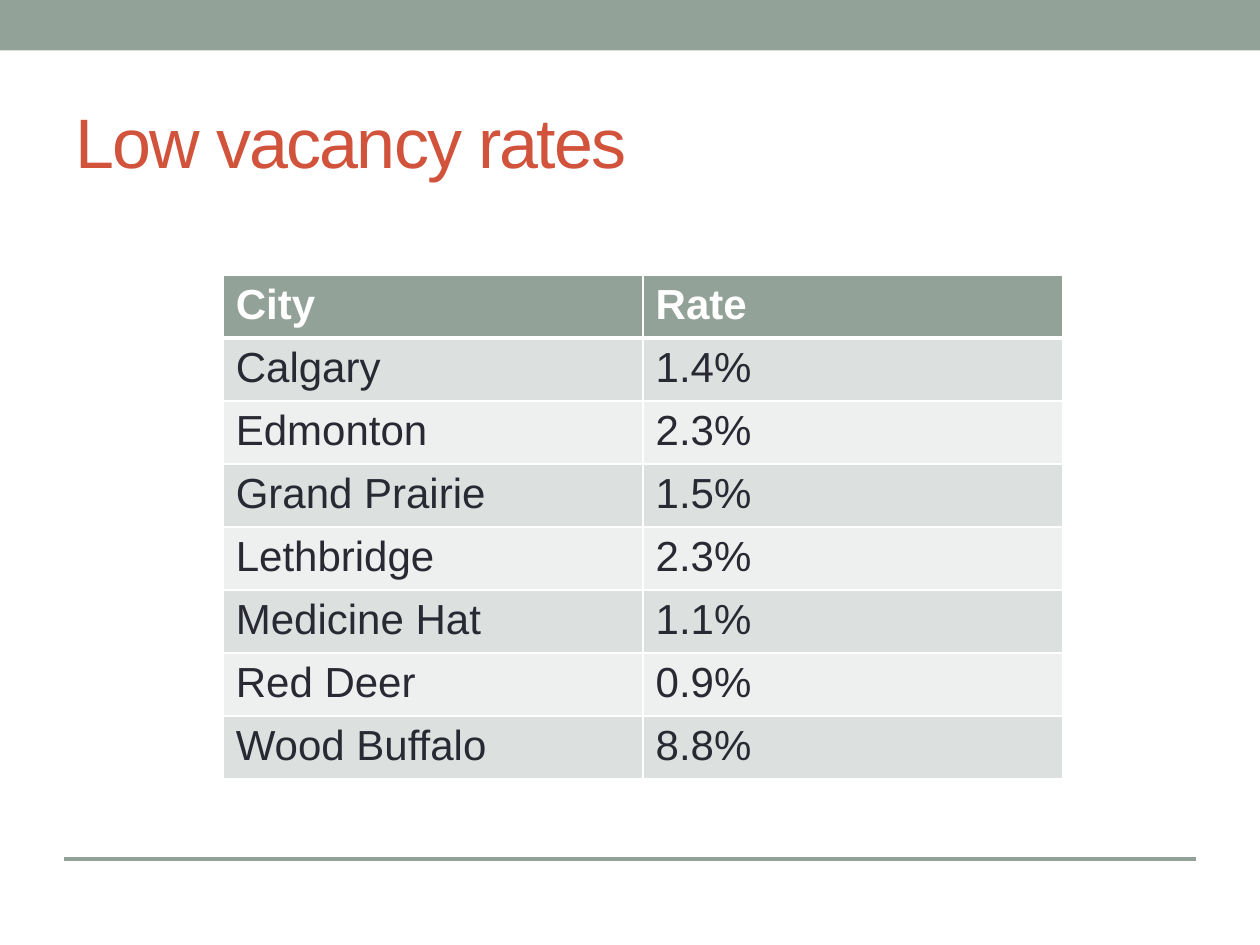
import pptx
import pptx.util
import pptx.dml.color
import pptx.enum.shapes
import pptx.enum.text
import pptx.oxml
import pptx.oxml.ns
from lxml import etree
from pptx.util import Cm

COLOURS = {
    "sage": "93A299",
    "title": "D2533C",
    "text": "292934",
    "white": "FFFFFF",
    "dark band": "DCE0DE",
    "light band": "EEF0EF",
}
FONT = "Arial"
RATES = [
    ("City", "Rate"),
    ("Calgary", "1.4%"),
    ("Edmonton", "2.3%"),
    ("Grand Prairie", "1.5%"),
    ("Lethbridge", "2.3%"),
    ("Medicine Hat", "1.1%"),
    ("Red Deer", "0.9%"),
    ("Wood Buffalo", "8.8%"),
]


def colour(name):
    return pptx.dml.color.RGBColor.from_string(COLOURS[name])


def add_span(para, text, size, colour_name, bold=False):
    span = para.add_run()
    span.text = text
    span.font.name = FONT
    span.font.size = pptx.util.Pt(size)
    span.font.bold = bold
    span.font.color.rgb = colour(colour_name)
    return span


def add_band(page, left, top, width, height):
    band = page.shapes.add_shape(
        pptx.enum.shapes.MSO_SHAPE.RECTANGLE, left, top, width, height)
    band.shadow.inherit = False
    band.fill.solid()
    band.fill.fore_color.rgb = colour("sage")
    band.line.fill.background()


def add_footer_rule(page, left, top, width):
    rule = page.shapes.add_connector(
        pptx.enum.shapes.MSO_CONNECTOR.STRAIGHT, left, top, left + width, top)
    rule.line.color.rgb = colour("sage")
    rule.line.width = pptx.util.Pt(2.08)
    etree.SubElement(rule._element.spPr, pptx.oxml.ns.qn("a:effectLst"))


def add_title(page, left, top, width, height):
    box = page.shapes.add_textbox(left, top, width, height)
    frame = box.text_frame
    frame.word_wrap = True
    frame.vertical_anchor = pptx.enum.text.MSO_ANCHOR.MIDDLE
    span = add_span(frame.paragraphs[0], "Low vacancy rates", 40, "title")
    span.font._element.set("spc", "-100")


def set_borders(cell, widths):
    properties = cell._tc.get_or_add_tcPr()
    for position, (side, points) in enumerate(widths.items()):
        border = pptx.oxml.parse_xml(
            f'<a:{side} {pptx.oxml.ns.nsdecls("a")} w="{pptx.util.Pt(points)}">'
            f'<a:solidFill><a:srgbClr val="{COLOURS["white"]}"/></a:solidFill>'
            f'</a:{side}>')
        properties.insert(position, border)


def add_rate_table(page, left, top, width, row_height):
    table = page.shapes.add_table(
        len(RATES), 2, left, top, width, row_height * len(RATES)).table
    for row, values in enumerate(RATES):
        header = row == 0
        band = "sage" if header else "dark band" if row % 2 else "light band"
        borders = {"lnL": 1, "lnR": 1,
                   "lnT": 3 if row == 1 else 1, "lnB": 3 if header else 1}
        for column, value in enumerate(values):
            cell = table.cell(row, column)
            cell.fill.solid()
            cell.fill.fore_color.rgb = colour(band)
            set_borders(cell, borders)
            add_span(cell.text_frame.paragraphs[0], value, 24,
                     "white" if header else "text", header)


def main():
    deck = pptx.Presentation()
    deck.slide_width, deck.slide_height = Cm(25.4), Cm(19.05)
    page = deck.slides.add_slide(deck.slide_layouts[6])
    add_band(page, 0, 0, deck.slide_width, Cm(1.02))
    add_footer_rule(page, Cm(1.3), Cm(17.32), Cm(22.8))
    add_title(page, Cm(1.27), Cm(1.47), Cm(22.86), Cm(2.74))
    add_rate_table(page, Cm(4.5), Cm(5.54), Cm(16.93), Cm(1.04))
    deck.save("out.pptx")


if __name__ == "__main__":
    main()
